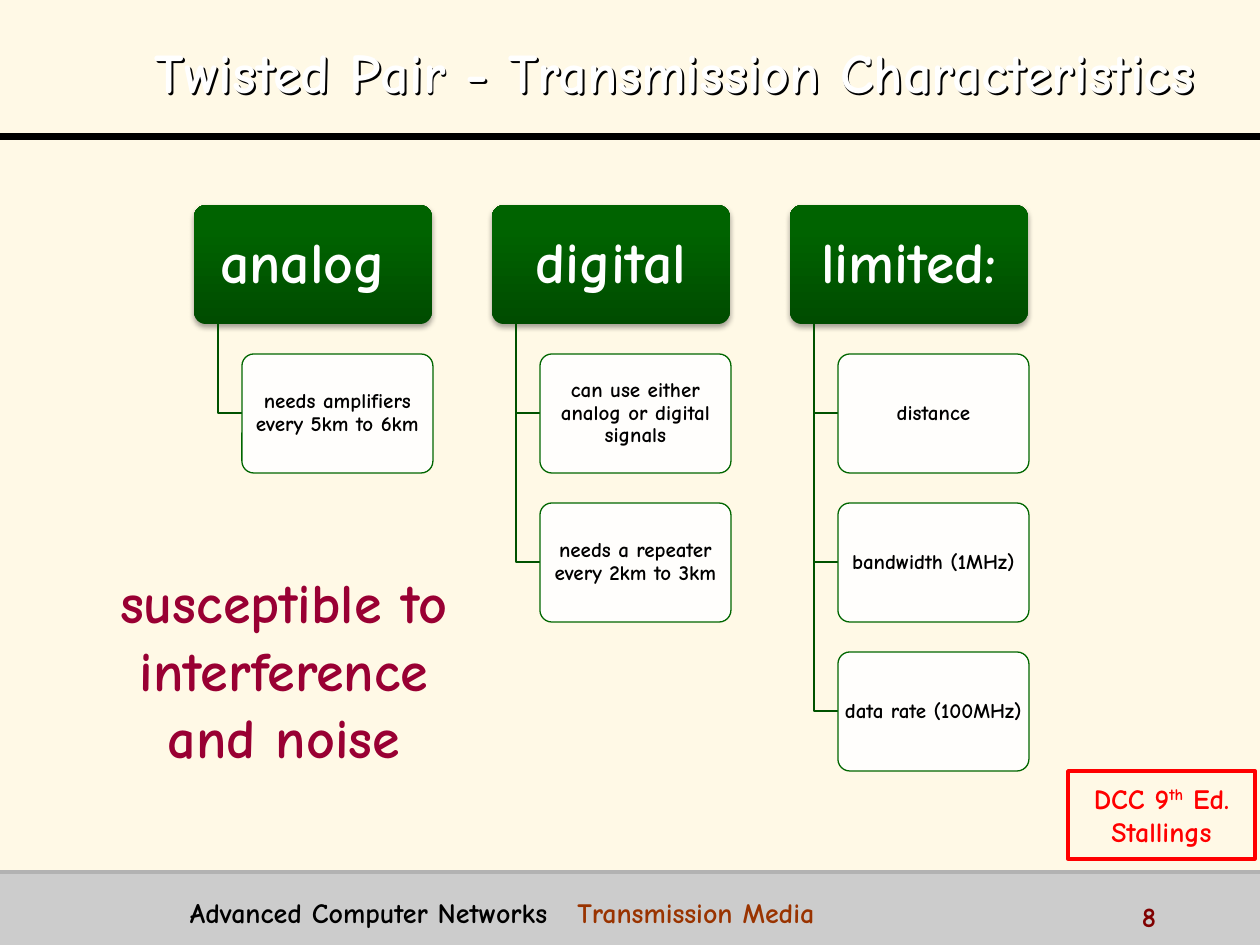
from dataclasses import dataclass

from lxml import etree
from pptx import Presentation
from pptx import util as u
from pptx.dml.color import RGBColor
from pptx.enum import shapes, text
from pptx.oxml.ns import qn

PX = 914400 / 126
FONT = "Comic Neue"
COLORS = {
    "background": "FFF9E6", "footer": "CCCCCC", "footer_rule": "B2B2B2",
    "black": "000000", "white": "FFFFFF", "header_dark": "004C00",
    "header_light": "006300", "branch": "005200", "border": "006600",
    "note": "990033", "chapter": "993300", "number": "800000", "source": "FF0000",
}
CENTER, LEFT = text.PP_ALIGN.CENTER, text.PP_ALIGN.LEFT
MIDDLE, TOP = text.MSO_ANCHOR.MIDDLE, text.MSO_ANCHOR.TOP

# Tree layout
TREE_LEFT, TREE_TOP, COLUMN_PITCH, ROW_PITCH = 194, 205, 298, 149
HEADER_WIDTH, BOX_HEIGHT, ITEM_WIDTH = 238, 119, 191
ITEM_INDENT, STEM_INDENT = 48, 24


@dataclass
class Box:
    left: int
    top: int
    width: int
    height: int


@dataclass
class Run:
    words: str
    color: str
    superscript: bool = False


@dataclass
class Branch:
    header: str
    items: list[str]


BRANCHES = [
    Branch("analog ", ["needs amplifiers every 5km to 6km"]),
    Branch("digital", ["can use either analog or digital signals",
                       "needs a repeater every 2km to 3km"]),
    Branch("limited:", ["distance", "bandwidth (1MHz)", "data rate (100MHz)"]),
]


def px(length: float) -> int:
    return round(length * PX)


def rgb(name: str) -> RGBColor:
    return RGBColor.from_string(COLORS[name])


def place(box: Box) -> list[int]:
    return [px(n) for n in (box.left, box.top, box.width, box.height)]


def write(shape, lines: list[list[Run]], size: int, align=CENTER, anchor=MIDDLE,
          insets=(13, 6), spacing=None, wrap=True) -> None:
    frame = shape.text_frame
    across, down = (px(n) for n in insets)
    frame_format = {
        "word_wrap": wrap, "auto_size": text.MSO_AUTO_SIZE.NONE,
        "vertical_anchor": anchor, "margin_left": across, "margin_right": across,
        "margin_top": down, "margin_bottom": down,
    }
    for name, value in frame_format.items():
        setattr(frame, name, value)
    for index, runs in enumerate(lines):
        paragraph = frame.add_paragraph() if index else frame.paragraphs[0]
        paragraph.alignment = align
        if spacing:
            paragraph.line_spacing = spacing
        for part in runs:
            run = paragraph.add_run()
            run.text = part.words
            for name, value in {"name": FONT, "size": u.Pt(size), "bold": True}.items():
                setattr(run.font, name, value)
            run.font.color.rgb = rgb(part.color)
            if part.superscript:
                run._r.get_or_add_rPr().set("baseline", "30000")


def add_text(slide, box: Box, lines: list[list[Run]], size: int, align=LEFT) -> None:
    write(slide.shapes.add_textbox(*place(box)), lines, size, align, TOP)


def add_box(slide, box: Box, kind, line: str | None = None, weight: float = 0.75):
    shape = slide.shapes.add_shape(kind, *place(box))
    shape.shadow.inherit = False
    if kind == shapes.MSO_SHAPE.ROUNDED_RECTANGLE:
        shape.adjustments[0] = 0.1
    if line:
        shape.line.color.rgb = rgb(line)
        shape.line.width = u.Pt(weight)
    else:
        shape.line.fill.background()
    return shape


def add_rule(slide, top: int, color: str, weight: float) -> None:
    rule = slide.shapes.add_connector(
        shapes.MSO_CONNECTOR.STRAIGHT, 0, px(top), px(1260), px(top))
    rule.line.color.rgb = rgb(color)
    rule.line.width = u.Pt(weight)
    etree.SubElement(rule._element.spPr, qn("a:effectLst"))


def add_shadow(shape, blur: float, distance: float, angle: int, alpha: int) -> None:
    shape.shadow.inherit = False
    effects = shape._element.spPr.find(qn("a:effectLst"))
    shadow = etree.SubElement(
        effects, qn("a:outerShdw"), blurRad=str(u.Pt(blur)), dist=str(u.Pt(distance)),
        dir=str(angle * 60000), algn="ctr", rotWithShape="0")
    color = etree.SubElement(shadow, qn("a:srgbClr"), val=COLORS["black"])
    etree.SubElement(color, qn("a:alpha"), val=str(alpha * 1000))


def add_header(slide, left: int, words: str) -> None:
    shape = add_box(slide, Box(left, TREE_TOP, HEADER_WIDTH, BOX_HEIGHT),
                    shapes.MSO_SHAPE.ROUNDED_RECTANGLE)
    shape.fill.gradient()
    shape.fill.gradient_angle = 90
    stops = [("header_dark", 0), ("header_light", 0.8)]
    for stop, (color, position) in zip(shape.fill.gradient_stops, stops):
        stop.color.rgb = rgb(color)
        stop.position = position
    add_shadow(shape, 3.1, 1.8, 90, 35)
    write(shape, [[Run(words, "white")]], 33, insets=(9, 6), spacing=0.9)


def add_item(slide, left: int, row: int, words: str) -> None:
    top = TREE_TOP + row * ROW_PITCH
    stem, middle = left + STEM_INDENT, top + BOX_HEIGHT // 2
    builder = slide.shapes.build_freeform(stem, TREE_TOP + BOX_HEIGHT, scale=PX)
    builder.add_line_segments([(stem, middle), (left + ITEM_INDENT, middle)], close=False)
    elbow = builder.convert_to_shape()
    elbow.shadow.inherit = False
    elbow.fill.background()
    elbow.line.color.rgb = rgb("branch")
    elbow.line.width = u.Pt(0.75)

    shape = add_box(slide, Box(left + ITEM_INDENT, top, ITEM_WIDTH, BOX_HEIGHT),
                    shapes.MSO_SHAPE.ROUNDED_RECTANGLE, "border")
    shape.fill.solid()
    shape.fill.fore_color.rgb = rgb("white")
    fill_color = shape._element.spPr.find(qn("a:solidFill"))[0]
    etree.SubElement(fill_color, qn("a:alpha"), val="90000")
    write(shape, [[Run(words, "black")]], 12, insets=(3, 3), spacing=0.9)


def main() -> None:
    presentation = Presentation()
    presentation.slide_width, presentation.slide_height = px(1260), px(945)
    slide = presentation.slides.add_slide(presentation.slide_layouts[5])
    slide.background.fill.solid()
    slide.background.fill.fore_color.rgb = rgb("background")

    # Footer band and rules
    band = add_box(slide, Box(0, 872, 1260, 73), shapes.MSO_SHAPE.RECTANGLE)
    band.fill.solid()
    band.fill.fore_color.rgb = rgb("footer")
    add_rule(slide, 137, "black", 4)
    add_rule(slide, 872, "footer_rule", 2)

    # Title: without a fill, the shape's shadow falls from its letters
    title = slide.shapes.title
    title.left, title.top, title.width, title.height = place(Box(79, -24, 1192, 183))
    title.fill.background()
    add_shadow(title, 0, 1.6, 45, 100)
    write(title, [[Run("Twisted Pair - Transmission Characteristics", "white")]], 32,
          spacing=1.1)

    # Tree of characteristics
    for column, branch in enumerate(BRANCHES):
        left = TREE_LEFT + column * COLUMN_PITCH
        add_header(slide, left, branch.header)
        for row, words in enumerate(branch.items, start=1):
            add_item(slide, left, row, words)

    # Note, footer texts and source
    add_text(slide, Box(74, 562, 420, 267),
             [[Run("susceptible to interference and noise", "note")]], 32, CENTER)
    add_text(slide, Box(177, 890, 917, 39),
             [[Run("Advanced Computer Networks   ", "black"),
               Run("Transmission Media", "chapter")]], 16)
    add_text(slide, Box(1129, 894, 126, 32), [[Run("8", "number")]], 16)
    source = add_box(slide, Box(1068, 771, 187, 88), shapes.MSO_SHAPE.RECTANGLE,
                     "source", 2)
    source.fill.background()
    write(source, [[Run("DCC 9", "source"), Run("th", "source", True),
                    Run(" Ed.", "source")], [Run("Stallings", "source")]], 16, wrap=False)

    presentation.save("out.pptx")


if __name__ == "__main__":
    main()
